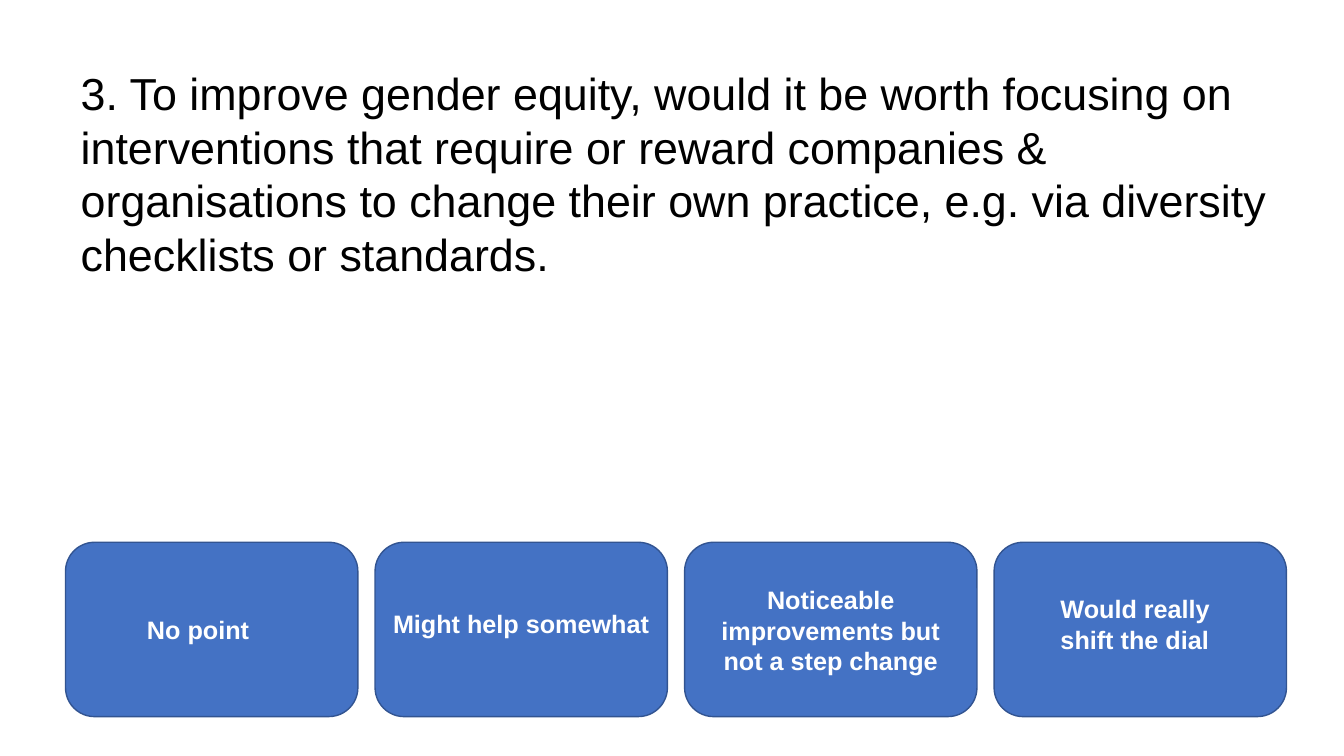
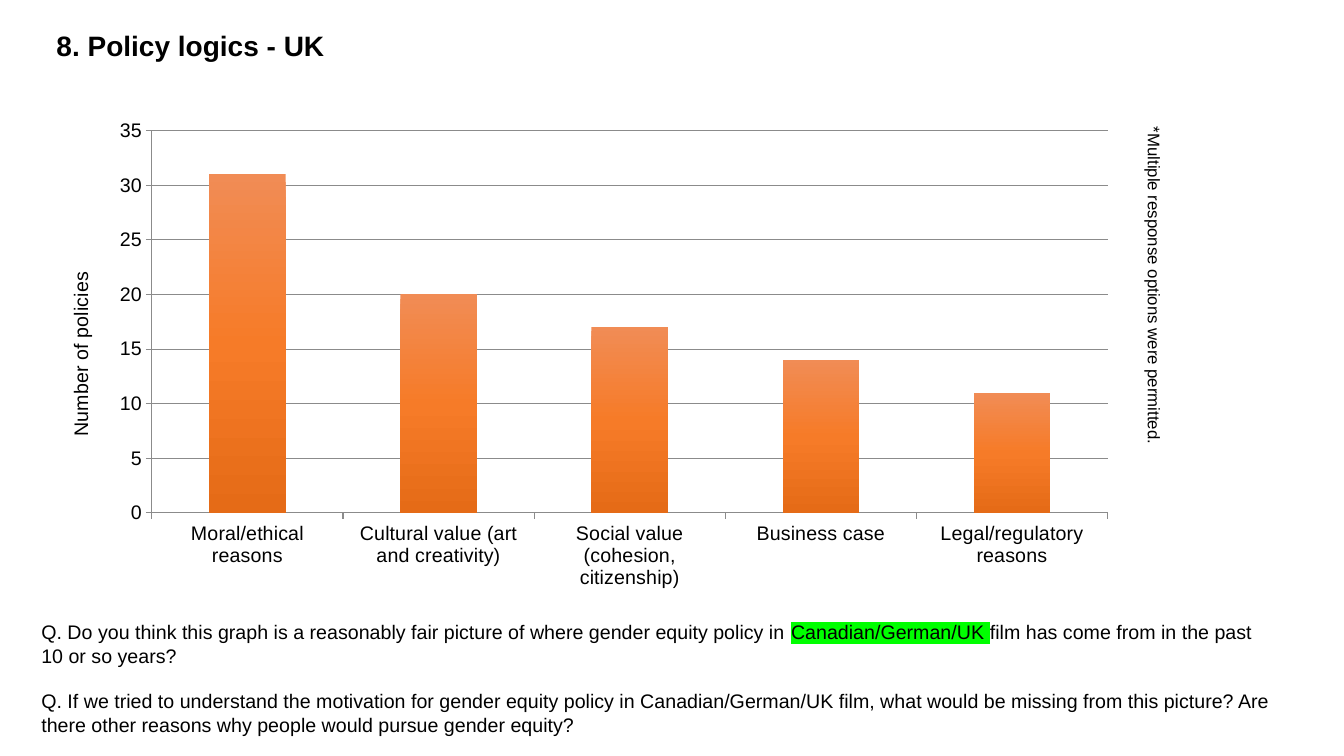
"""Build two slides on gender equity policy: a poll question and a chart of policy logics."""
from copy import deepcopy

from lxml import etree
from pptx import Presentation
from pptx import util as u
from pptx.chart import data as chart_data
from pptx.dml.color import RGBColor
from pptx.enum import chart as ch, shapes, text
from pptx.oxml.ns import qn

COLORS = {
    "ink": "000000", "paper": "FFFFFF", "option": "4472C4", "option_edge": "325491",
    "axis": "8B8B8B", "highlight": "00FF00",
    "bar_top": "F18C55", "bar_middle": "F67B28", "bar_bottom": "E56B17",
}
FONT = "Arial"


def rgb(name):
    return RGBColor.from_string(COLORS[name])


def style_text(shape, box, size, color="ink", bold=False, align=text.PP_ALIGN.LEFT):
    shape.left, shape.top, shape.width, shape.height = [u.Inches(length) for length in box]
    frame = shape.text_frame
    frame.word_wrap = True
    frame.auto_size = text.MSO_AUTO_SIZE.NONE
    frame.vertical_anchor = text.MSO_ANCHOR.TOP
    for paragraph in frame.paragraphs:
        paragraph.alignment = align
        for run in paragraph.runs:
            run.font.name = FONT
            run.font.size = u.Pt(size)
            run.font.bold = bold
            run.font.color.rgb = rgb(color)


prs = Presentation()
prs.slide_width, prs.slide_height = u.Inches(13.33), u.Inches(7.5)

poll = prs.slides.add_slide(prs.slide_layouts[5])
poll.shapes.title.text_frame.text = (
    "3. To improve gender equity, would it be worth focusing on interventions that require "
    "or reward companies & organisations to change their own practice, e.g. via diversity "
    "checklists or standards."
)
style_text(poll.shapes.title, (0.7, 0.6, 12.41, 2.26), 32)

options = [
    ("No point", (1.36, 6.05, 1.26, 0.4), text.PP_ALIGN.LEFT),
    ("Might help somewhat", (3.8, 5.99, 2.77, 0.4), text.PP_ALIGN.LEFT),
    ("Noticeable improvements but not a step change", (6.91, 5.75, 2.66, 1.01), text.PP_ALIGN.CENTER),
    ("Would really shift the dial", (10.42, 5.84, 2.13, 0.71), text.PP_ALIGN.LEFT),
]
for index, (wording, box, align) in enumerate(options):
    button = poll.shapes.add_shape(
        shapes.MSO_SHAPE.ROUNDED_RECTANGLE,
        u.Inches(0.65 + 3.07 * index), u.Inches(5.38), u.Inches(2.9), u.Inches(1.73),
    )
    button.shadow.inherit = False
    button.fill.solid()
    button.fill.fore_color.rgb = rgb("option")
    button.line.color.rgb = rgb("option_edge")
    button.line.width = u.Pt(1)
    label = poll.shapes.add_textbox(0, 0, 0, 0)
    label.text_frame.text = wording
    style_text(label, box, 18, "paper", True, align)

logics = prs.slides.add_slide(prs.slide_layouts[1])
logics.shapes.title.text_frame.text = "8. Policy logics - UK"
style_text(logics.shapes.title, (0.46, 0.23, 6.66, 0.44), 20, bold=True)

policies = chart_data.CategoryChartData()
policies.categories = [
    "Moral/ethical reasons", "Cultural value (art and creativity)",
    "Social value (cohesion, citizenship)", "Business case", "Legal/regulatory reasons",
]
policies.add_series("Series 1", (31, 20, 17, 14, 11))
chart = logics.shapes.add_chart(
    ch.XL_CHART_TYPE.COLUMN_CLUSTERED,
    u.Inches(0.46), u.Inches(1.09), u.Inches(10.74), u.Inches(4.85), policies,
).chart
chart.has_legend = False
chart.has_title = False
chart.font.name = FONT
chart.font.size = u.Pt(14)
chart.font.color.rgb = rgb("ink")

plot = chart.plots[0]
plot.gap_width = 150
plot.vary_by_categories = False
bars = plot.series[0]
bars.format.fill.gradient()
bars.format.fill.gradient_angle = 270
stop_list = next(bars._element.iter(qn("a:gsLst")))
stop_list.append(deepcopy(stop_list[-1]))
stops = zip(bars.format.fill.gradient_stops, (0, 0.5, 1), ("bar_top", "bar_middle", "bar_bottom"))
for stop, position, color in stops:
    stop.position = position
    stop.color.rgb = rgb(color)

counts = chart.value_axis
counts.minimum_scale, counts.maximum_scale, counts.major_unit = 0, 35, 5
counts.has_major_gridlines = True
for line in (counts.format.line, chart.category_axis.format.line, counts.major_gridlines.format.line):
    line.color.rgb = rgb("axis")
    line.width = u.Pt(0.75)
for axis in (counts, chart.category_axis):
    axis.major_tick_mark = ch.XL_TICK_MARK.OUTSIDE
counts.axis_title.text_frame.text = "Number of policies"
axis_font = counts.axis_title.text_frame.paragraphs[0].runs[0].font
axis_font.name, axis_font.size, axis_font.bold = FONT, u.Pt(14), False
axis_font.color.rgb = rgb("ink")

footnote = logics.shapes.add_textbox(0, 0, 0, 0)
footnote.text_frame.text = "*Multiple response options were permitted."
style_text(footnote, (8.06, 4.4, 6.78, 0.3), 12)
footnote.rotation = 90

questions = logics.placeholders[1]
frame = questions.text_frame
first, second = frame.paragraphs[0], frame.add_paragraph()
for wording in (
    "Q. Do you think this graph is a reasonably fair picture of where gender equity policy in ",
    "Canadian/German/UK ",
    "film has come from in the past 10 or so years?",
):
    first.add_run().text = wording
second.text = (
    "Q. If we tried to understand the motivation for gender equity policy in "
    "Canadian/German/UK film, what would be missing from this picture? Are there other "
    "reasons why people would pursue gender equity?"
)
style_text(questions, (0.31, 6.1, 12.42, 1.28), 14)
for paragraph, gap in ((first, 0), (second, 16)):
    paragraph.space_before = u.Pt(gap)
    properties = paragraph._p.get_or_add_pPr()
    properties.set("marL", "0")
    properties.set("indent", "0")
    etree.SubElement(properties, qn("a:buNone"))
latin = first.runs[1]._r.rPr.find(qn("a:latin"))
marker = etree.Element(qn("a:highlight"))
etree.SubElement(marker, qn("a:srgbClr"), val=COLORS["highlight"])
latin.addprevious(marker)

prs.save("out.pptx")
